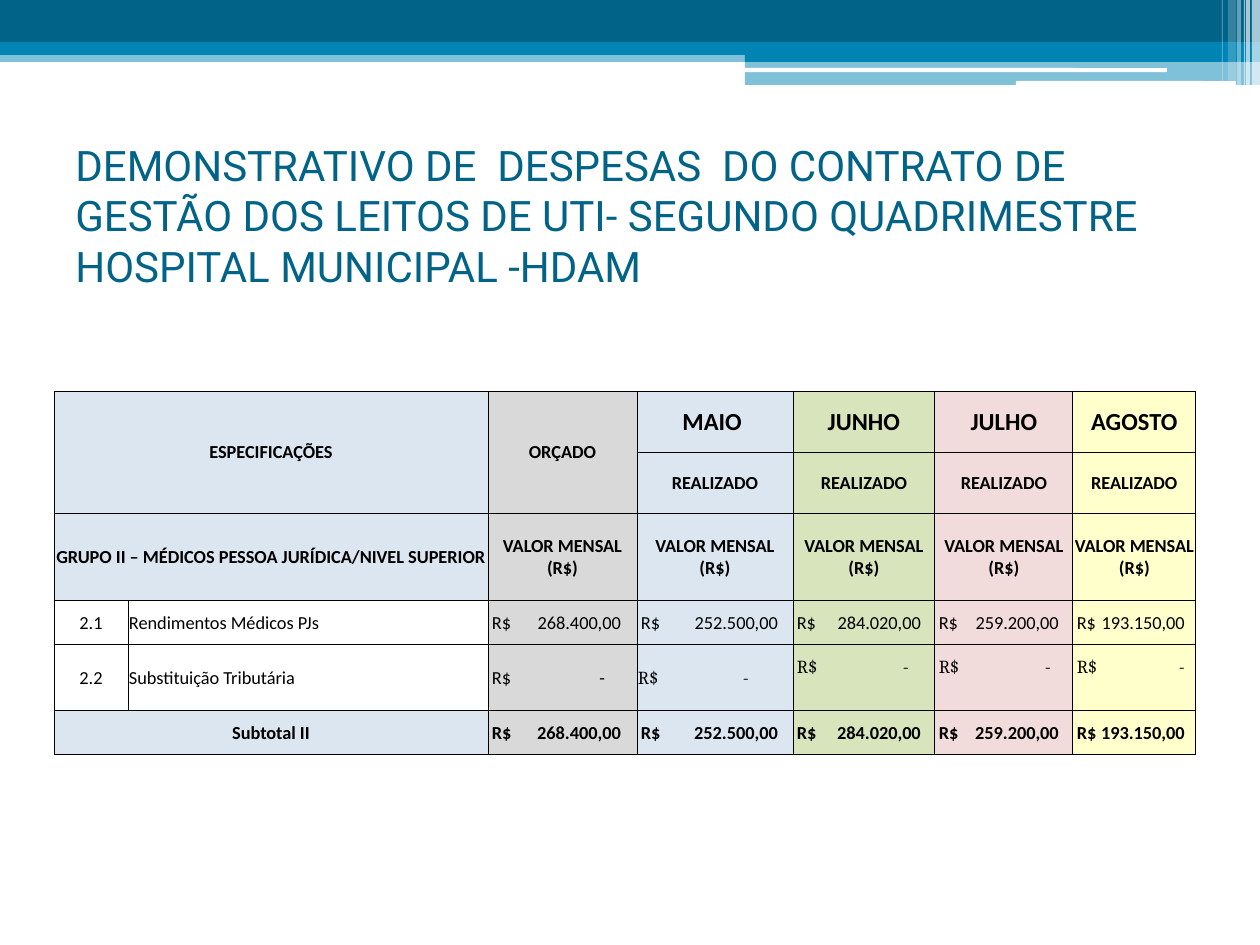
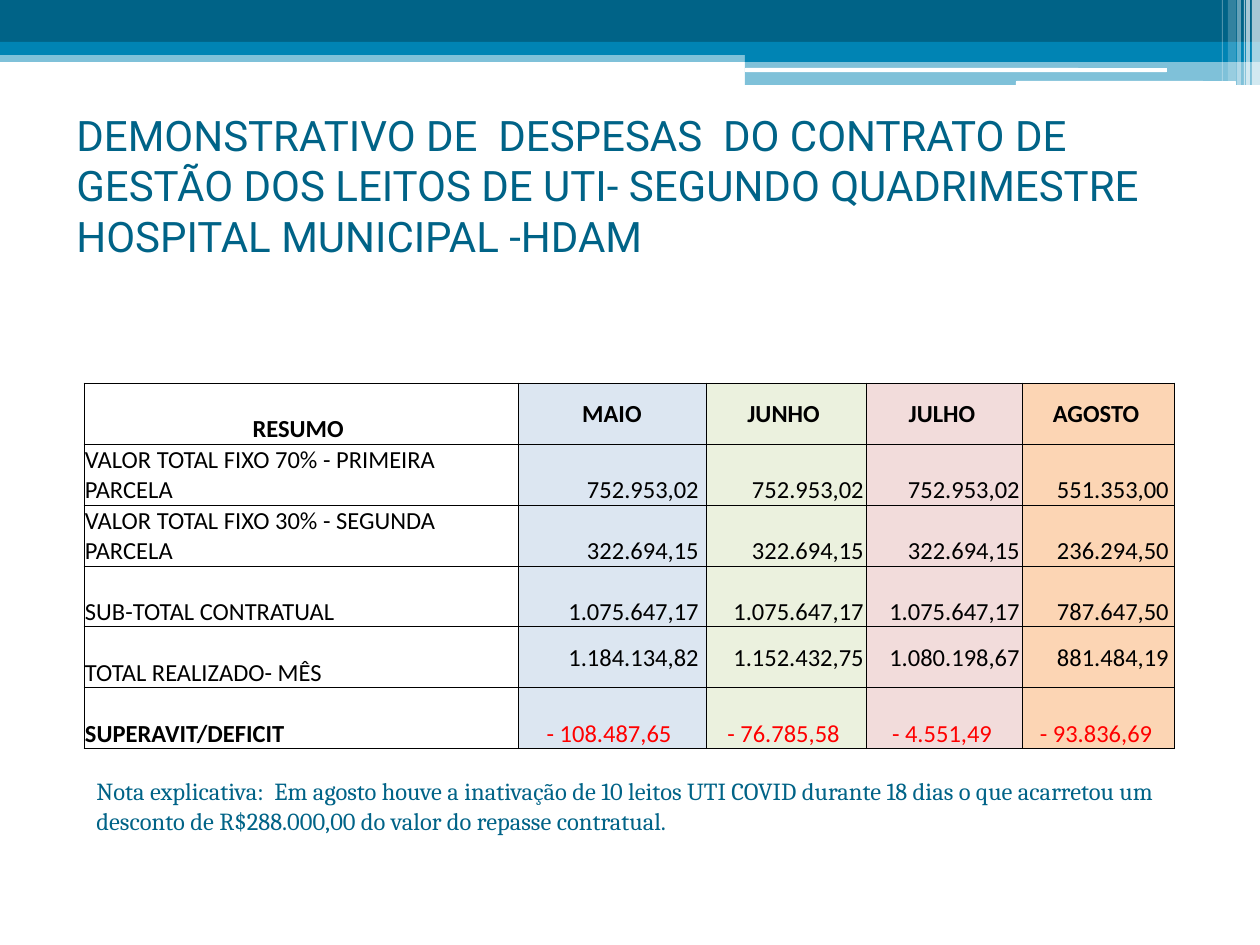
from lxml.etree import SubElement
from pptx import Presentation
from pptx.dml.color import RGBColor
from pptx.enum.shapes import MSO_SHAPE
from pptx.enum.text import MSO_ANCHOR, PP_ALIGN
from pptx.oxml import parse_xml
from pptx.oxml.ns import nsdecls, qn
from pptx.util import Emu, Pt

PX = 914400 // 126
NAVY, BLUE, WHITE, BLACK, RED = "006387", "0084B4", "FFFFFF", "000000", "FF0000"
SKY, GREY, GREEN, PALE_GREEN = "DCE6F1", "D9D9D9", "D8E4BC", "EBF1DE"
ROSE, YELLOW, ORANGE = "F2DCDB", "FFFFCC", "FCD5B4"

TITLE = ("DEMONSTRATIVO DE  DESPESAS  DO CONTRATO DE GESTÃO DOS LEITOS DE UTI- "
         "SEGUNDO QUADRIMESTRE \vHOSPITAL MUNICIPAL -HDAM")
NOTE = ("Nota explicativa:  Em agosto houve a inativação de 10 leitos UTI COVID "
        "durante 18 dias o que acarretou um desconto de R$288.000,00 do valor do "
        "repasse contratual.")

# left, top, width, height, colour, opacity in percent
BANDS = [
    (0, 50, 1260, 12, BLUE, 50),
    (0, 0, 1260, 43, NAVY, 100),
    (0, 42, 1260, 13, BLUE, 100),
    (745, 49, 515, 13, BLUE, 100),
    (745, 61, 515, 24, BLUE, 50),
]
ROUNDED_LINES = [(745, 68, 422, 4), (1016, 81, 220, 5)]
# left, width, height, opacity in percent
STRIPES = [(1252, 8, 85, 65), (1246, 4, 85, 65), (1244, 1, 85, 60),
           (1237, 4, 85, 40), (1228, 8, 81, 20), (1222, 1, 81, 30)]

# month, fill, paid amount, right inset of the amounts and of the dash
MONTHS = [
    ("MAIO ", SKY, "252.500,00", 15, 44),
    ("JUNHO", GREEN, "284.020,00", 14, 26),
    ("JULHO", ROSE, "259.200,00", 14, 22),
    ("AGOSTO", YELLOW, "193.150,00", 11, 11),
]
BUDGET = ("ORÇADO", GREY, "268.400,00", 16, 32)

SUMMARY_HEADS = ["RESUMO ", "MAIO", "JUNHO ", "JULHO ", "AGOSTO "]
SUMMARY_FILLS = [None, SKY, PALE_GREEN, ROSE, ORANGE]
SUMMARY_INSETS = [1, 7, 3, 3, 6]
SUMMARY_ROWS = [
    ("VALOR TOTAL FIXO 70% - PRIMEIRA PARCELA",
     "752.953,02", "752.953,02", "752.953,02", "551.353,00"),
    ("VALOR TOTAL FIXO 30% - SEGUNDA PARCELA",
     "322.694,15", "322.694,15", "322.694,15", "236.294,50"),
    ("SUB-TOTAL CONTRATUAL",
     "1.075.647,17", "1.075.647,17", "1.075.647,17", "787.647,50"),
    ("TOTAL REALIZADO- MÊS",
     "1.184.134,82", "1.152.432,75", "1.080.198,67", "881.484,19"),
]
BALANCE = ["- 108.487,65 ", "- 76.785,58 ", "- 4.551,49 ", "- 93.836,69 "]


def color(hex_string):
    return RGBColor.from_string(hex_string)


def px(*lengths):
    return [Emu(length * PX) for length in lengths]


def format_runs(paragraph, font, size, ink, bold=False):
    for run in paragraph.runs:
        run.font.name = font
        run.font.size = Pt(size)
        run.font.bold = bold
        run.font.color.rgb = color(ink)


def add_band(slide, box, fill, opacity=100, outline=MSO_SHAPE.RECTANGLE):
    band = slide.shapes.add_shape(outline, *px(*box))
    band.shadow.inherit = False
    band.line.fill.background()
    band.fill.solid()
    band.fill.fore_color.rgb = color(fill)
    if opacity < 100:
        tint = band._element.spPr.find(".//" + qn("a:srgbClr"))
        SubElement(tint, qn("a:alpha"), val=str(opacity * 1000))


def add_header(slide):
    for *box, fill, opacity in BANDS:
        add_band(slide, box, fill, opacity)
    for box in ROUNDED_LINES:
        add_band(slide, box, WHITE, outline=MSO_SHAPE.ROUNDED_RECTANGLE)
    for left, width, height, opacity in STRIPES:
        add_band(slide, (left, 0, width, height), WHITE, opacity)


def add_text(slide, box, text, font, size, anchor):
    frame = slide.shapes.add_textbox(*px(*box)).text_frame
    frame.word_wrap = True
    frame.vertical_anchor = anchor
    paragraph = frame.paragraphs[0]
    paragraph.text = text
    format_runs(paragraph, font, size, NAVY)


def add_titled_slide(deck, left, top):
    slide = deck.slides.add_slide(deck.slide_layouts[6])
    add_header(slide)
    add_text(slide, (left, top, 1134, 158), TITLE, "Roboto", 24, MSO_ANCHOR.MIDDLE)
    return slide


def add_grid(slide, left, top, widths, heights):
    """Add an unstyled table with thin black borders round every cell."""
    frame = slide.shapes.add_table(len(heights), len(widths),
                                   *px(left, top, sum(widths), sum(heights)))
    table = frame.table
    table.first_row = table.horz_banding = False
    for column, width in zip(table.columns, widths):
        column.width = Emu(width * PX)
    for row, height in zip(table.rows, heights):
        row.height = Emu(height * PX)
    for cell in table.iter_cells():
        cell.fill.background()
        set_insets(cell)
        properties = cell._tc.get_or_add_tcPr()
        for index, side in enumerate("LRTB"):
            properties.insert(index, parse_xml(
                f'<a:ln{side} {nsdecls("a")} w="6350"><a:solidFill>'
                f'<a:srgbClr val="{BLACK}"/></a:solidFill></a:ln{side}>'))
    return table


def set_insets(cell, left=1, right=1, bottom=0):
    cell.margin_left, cell.margin_top, cell.margin_right, cell.margin_bottom = px(
        left, 1, right, bottom)


def fill_cell(cell, text, fill=None, size=10.5, bold=False, ink=BLACK, font="Calibri",
              align=PP_ALIGN.LEFT, anchor=MSO_ANCHOR.MIDDLE):
    if fill:
        cell.fill.solid()
        cell.fill.fore_color.rgb = color(fill)
    cell.vertical_anchor = anchor
    paragraph = cell.text_frame.paragraphs[0]
    paragraph.text = text
    paragraph.alignment = align
    format_runs(paragraph, font, size, ink, bold)


def fill_heading(cell, text, fill=None, size=10.5, bold=True, **style):
    fill_cell(cell, text, fill, size, bold, align=PP_ALIGN.CENTER, **style)


def fill_money(cell, amount, width, right_inset, left_inset=4, bottom_inset=0, **style):
    """Put R$ at the left and the amount at a right tab stop."""
    fill_cell(cell, f"R$\t{amount}", **style)
    set_insets(cell, left_inset, bottom=bottom_inset)
    properties = cell.text_frame.paragraphs[0]._p.get_or_add_pPr()
    stops = SubElement(properties, qn("a:tabLst"))
    SubElement(stops, qn("a:tab"), pos=str((width - left_inset - right_inset) * PX),
               algn="r")


def add_expenses_table(slide, left, top):
    widths = [74, 360, 149, 156, 142, 138, 123]
    table = add_grid(slide, left, top, widths, [61, 61, 88, 44, 66, 44])
    cell = table.cell
    cell(0, 0).merge(cell(1, 1))
    cell(0, 2).merge(cell(1, 2))
    cell(2, 0).merge(cell(2, 1))
    cell(5, 0).merge(cell(5, 1))

    fill_heading(cell(0, 0), "ESPECIFICAÇÕES", SKY)
    fill_heading(cell(2, 0), "GRUPO II – MÉDICOS PESSOA JURÍDICA/NIVEL SUPERIOR", SKY)
    fill_heading(cell(5, 0), "Subtotal II", SKY)
    for row, number, expense in [(3, "2.1", "Rendimentos Médicos PJs"),
                                 (4, "2.2", "Substituição Tributária")]:
        fill_heading(cell(row, 0), number, bold=False)
        fill_cell(cell(row, 1), expense)

    for column, (head, fill, amount, inset, dash_inset) in enumerate([BUDGET] + MONTHS, 2):
        is_budget = column == 2
        width = widths[column]
        fill_heading(cell(0, column), head, fill, 10.5 if is_budget else 14)
        if not is_budget:
            fill_heading(cell(1, column), "REALIZADO", fill)
        fill_heading(cell(2, column), "VALOR MENSAL (R$)", fill)
        fill_money(cell(3, column), amount, width, inset, fill=fill)
        fill_money(cell(4, column), "-", width, dash_inset, fill=fill,
                   left_inset=1 if column == 3 else 4,
                   bottom_inset=22 if column > 3 else 0,
                   font="Calibri" if is_budget else "Cambria")
        fill_money(cell(5, column), amount, width, inset, fill=fill, bold=True)


def add_summary_table(slide, left, top):
    table = add_grid(slide, left, top, [434, 188, 161, 156, 152], [61] * 6)
    bottom, middle = MSO_ANCHOR.BOTTOM, MSO_ANCHOR.MIDDLE
    for column, (head, fill, inset) in enumerate(
            zip(SUMMARY_HEADS, SUMMARY_FILLS, SUMMARY_INSETS)):
        fill_heading(table.cell(0, column), head, fill, 14,
                     anchor=middle if column else bottom)
        for row, values in enumerate(SUMMARY_ROWS, 1):
            cell = table.cell(row, column)
            is_realized = column and row == len(SUMMARY_ROWS)
            fill_cell(cell, values[column], fill, 14,
                      align=PP_ALIGN.RIGHT if column else PP_ALIGN.LEFT,
                      anchor=middle if is_realized else bottom)
            set_insets(cell, right=inset)
        if column:
            fill_heading(table.cell(5, column), BALANCE[column - 1], fill, 14,
                         bold=False, ink=RED, anchor=bottom)
    fill_cell(table.cell(5, 0), "SUPERAVIT/DEFICIT", size=14, bold=True, anchor=bottom)


def main():
    deck = Presentation()
    deck.slide_width, deck.slide_height = px(1260, 945)

    expenses = add_titled_slide(deck, 63, 136)
    add_expenses_table(expenses, 54, 391)

    summary = add_titled_slide(deck, 64, 106)
    add_summary_table(summary, 84, 383)
    add_text(summary, (84, 770, 1131, 72), NOTE, "Cambria", 14, MSO_ANCHOR.TOP)

    deck.save("out.pptx")


if __name__ == "__main__":
    main()
